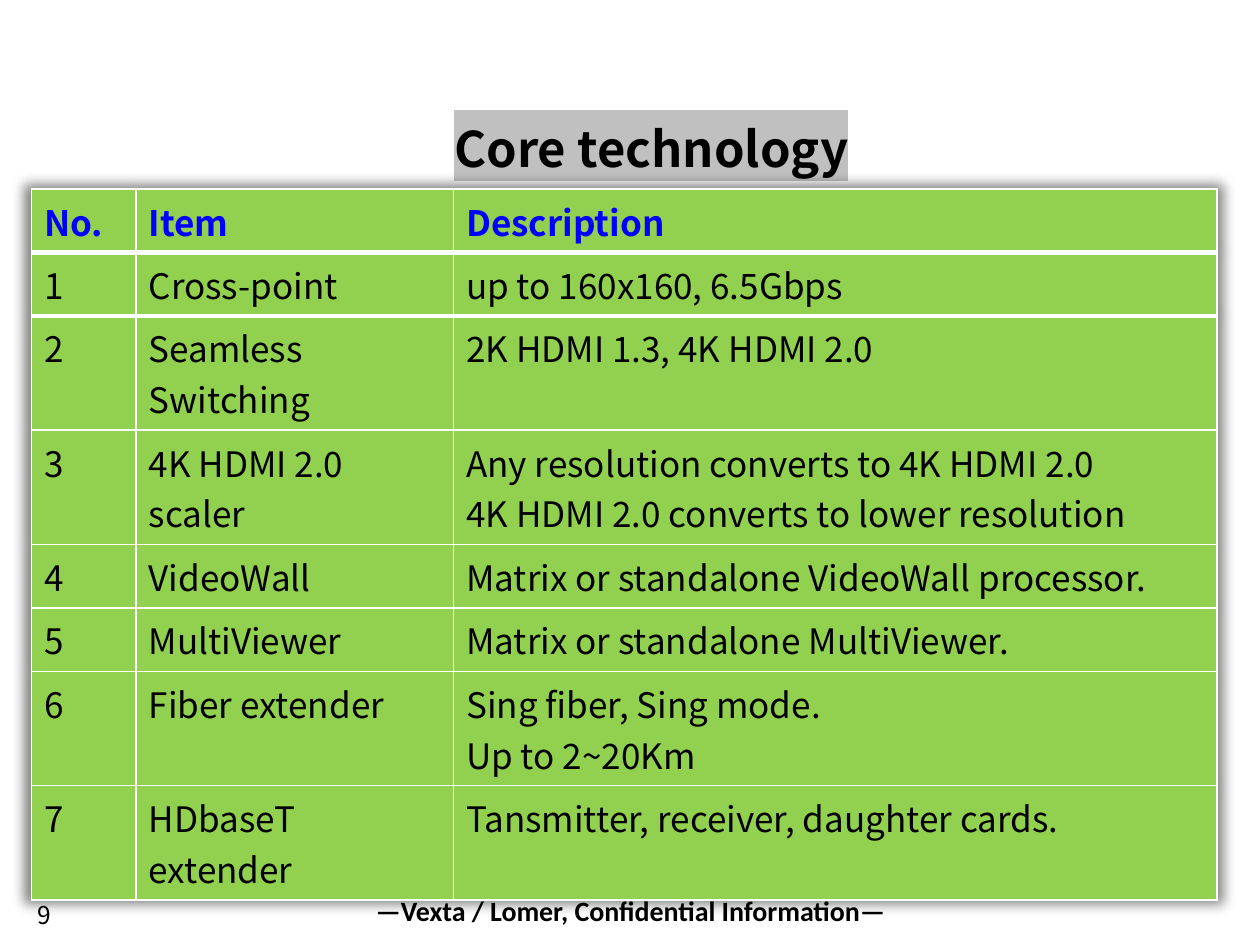
from lxml.etree import SubElement
from pptx import Presentation
from pptx.dml.color import RGBColor
from pptx.enum.text import MSO_ANCHOR, PP_ALIGN
from pptx.oxml import parse_xml
from pptx.oxml.ns import nsdecls, qn
from pptx.util import Inches, Pt

BLACK = RGBColor(0x00, 0x00, 0x00)
WHITE = RGBColor(0xFF, 0xFF, 0xFF)
BLUE = RGBColor(0x00, 0x00, 0xFF)
GREEN = RGBColor(0x92, 0xD0, 0x50)
SILVER = RGBColor(0xC0, 0xC0, 0xC0)
SANS = "Noto Sans CJK SC"

TITLE = "Core technology"
FOOTER = "—Vexta / Lomer, Confidential Information—"
PAGE = "9"
HEADER = ("No.", "Item", "Description")
# item, description lines, text lines the row needs
ITEMS = [
    ("Cross-point", ["up to 160x160, 6.5Gbps"], 1),
    ("Seamless Switching", ["2K HDMI 1.3, 4K HDMI 2.0"], 2),
    ("4K HDMI 2.0 scaler", ["Any resolution converts to 4K HDMI 2.0",
                            "4K HDMI 2.0 converts to lower resolution"], 2),
    ("VideoWall", ["Matrix or standalone VideoWall processor."], 1),
    ("MultiViewer", ["Matrix or standalone MultiViewer."], 1),
    ("Fiber extender", ["Sing fiber, Sing mode.", "Up to 2~20Km"], 2),
    ("HDbaseT extender", ["Tansmitter, receiver, daughter cards."], 2),
]
COL_WIDTHS = (0.83, 2.52, 6.06)
ROW_HEIGHTS = {1: 0.5, 2: 0.9}


def add_run(p, text, size, color=BLACK, bold=False, name=SANS):
    r = p.add_run()
    r.text = text
    r.font.size, r.font.bold, r.font.name = Pt(size), bold, name
    r.font.color.rgb = color
    return r


def set_insets(tf, left, top, right, bottom):
    tf.margin_left, tf.margin_top = Inches(left), Inches(top)
    tf.margin_right, tf.margin_bottom = Inches(right), Inches(bottom)


def add_highlight(r, color):
    """Put a marker colour behind a run; it must follow the run's fill."""
    highlight = SubElement(r.font._element, qn("a:highlight"))
    SubElement(highlight, qn("a:srgbClr")).set("val", str(color))
    r.font._element.find(qn("a:solidFill")).addnext(highlight)


def set_border(cell, side, points):
    """Draw one white cell edge; side is lnL, lnR, lnT or lnB."""
    cell._tc.get_or_add_tcPr().insert(0, parse_xml(
        f'<a:{side} {nsdecls("a")} w="{Pt(points)}"><a:solidFill>'
        f'<a:srgbClr val="{WHITE}"/></a:solidFill></a:{side}>'))


def add_title(slide):
    sp = slide.shapes.title
    sp.left, sp.top = Inches(0.47), Inches(0.89)
    sp.width, sp.height = Inches(9.4), Inches(1)
    tf = sp.text_frame
    tf.vertical_anchor = MSO_ANCHOR.TOP
    set_insets(tf, 0.05, 0.1, 0.05, 0.05)
    p = tf.paragraphs[0]
    p.alignment, p.line_spacing = PP_ALIGN.CENTER, 0.9
    add_highlight(add_run(p, TITLE, 28, bold=True), SILVER)


def add_table(slide):
    rows = [(1, [[text] for text in HEADER])]
    rows += [(lines, [[str(number)], [item], description])
             for number, (item, description, lines) in enumerate(ITEMS, 1)]
    heights = [ROW_HEIGHTS[lines] for lines, _ in rows]
    table = slide.shapes.add_table(
        len(rows), len(COL_WIDTHS), Inches(0.25), Inches(1.5),
        Inches(sum(COL_WIDTHS)), Inches(sum(heights))).table
    table.horz_banding = False
    for column, width in zip(table.columns, COL_WIDTHS):
        column.width = Inches(width)
    for i, (_, texts) in enumerate(rows):
        table.rows[i].height = Inches(heights[i])
        for j, paragraphs in enumerate(texts):
            cell = table.cell(i, j)
            cell.fill.solid()
            cell.fill.fore_color.rgb = GREEN
            tf = cell.text_frame
            for k, text in enumerate(paragraphs):
                p = tf.add_paragraph() if k else tf.paragraphs[0]
                add_run(p, text, 20, BLACK if i else BLUE, bold=i == 0)
    for j in range(len(HEADER)):
        set_border(table.cell(0, j), "lnB", 3)
        set_border(table.cell(1, j), "lnT", 3)
    table._tbl.tblPr.insert(0, parse_xml(
        f'<a:effectLst {nsdecls("a")}>'
        f'<a:outerShdw blurRad="{Inches(0.1)}" sx="101000" sy="101000" '
        'algn="ctr" rotWithShape="0">'
        f'<a:srgbClr val="{BLACK}"><a:alpha val="50000"/></a:srgbClr>'
        '</a:outerShdw></a:effectLst>'))


def add_label(slide, left, top, width, wrap):
    """Add a vertically centred text box and return its text frame."""
    box = slide.shapes.add_textbox(
        Inches(left), Inches(top), Inches(width), Inches(0.32))
    tf = box.text_frame
    tf.word_wrap, tf.vertical_anchor = wrap, MSO_ANCHOR.MIDDLE
    return tf


def add_footer(slide):
    tf = add_label(slide, 2.92, 7.08, 4.17, True)
    set_insets(tf, 0, 0.05, 0, 0.05)
    p = tf.paragraphs[0]
    p.alignment, p.line_spacing = PP_ALIGN.CENTER, 0.9
    add_run(p, FOOTER, 16, bold=True, name="Calibri")

    tf = add_label(slide, 0.3, 7.1, 0.69, False)
    set_insets(tf, 0, 0.05, 0.1, 0.05)
    add_run(tf.paragraphs[0], PAGE, 14)


def main():
    prs = Presentation()
    prs.slide_width, prs.slide_height = Inches(10), Inches(7.5)
    slide = prs.slides.add_slide(prs.slide_layouts[5])
    add_title(slide)
    add_table(slide)
    add_footer(slide)
    prs.save("out.pptx")


if __name__ == "__main__":
    main()
